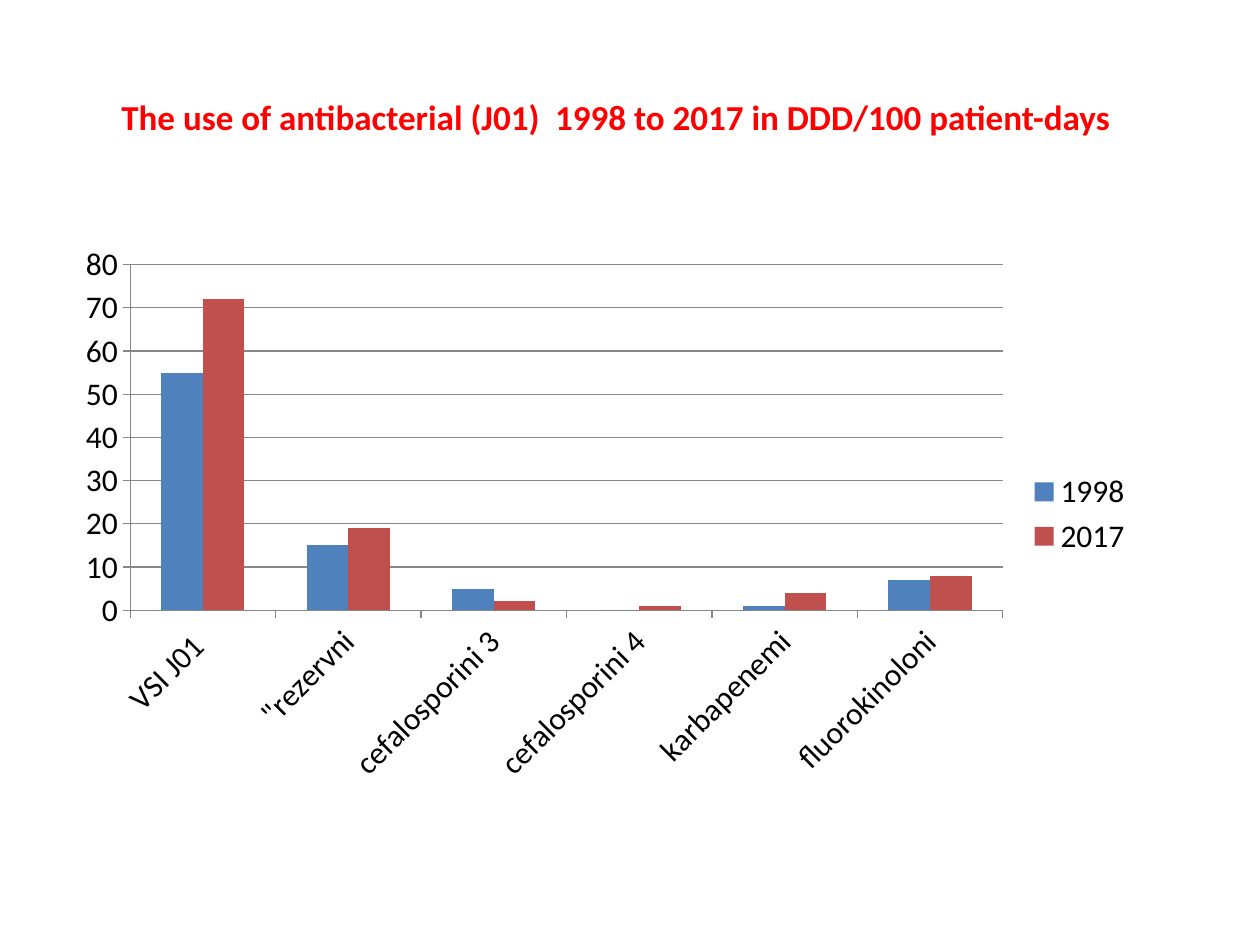
from pptx import Presentation
from pptx.chart.data import CategoryChartData as ChartData
from pptx.dml.color import RGBColor as Color
from pptx.enum.chart import XL_CHART_TYPE as ChartType
from pptx.enum.chart import XL_LEGEND_POSITION as LegendPosition
from pptx.enum.chart import XL_TICK_MARK as TickMark
from pptx.enum.text import MSO_ANCHOR as Anchor
from pptx.enum.text import PP_ALIGN as Align
from pptx.util import Inches, Pt

COLORS = {
    "title": "FF0000",
    "text": "000000",
    "1998": "4F81BD",
    "2017": "C0504D",
}
CATEGORIES = ["VSI J01 ", '"rezervni', "cefalosporini 3", "cefalosporini 4",
              "karbapenemi", "fluorokinoloni"]
USAGE = {
    "1998": [55, 15, 5, 0, 1, 7],
    "2017": [72, 19, 2, 1, 4, 8],
}


def format_font(font, size, color, name="Calibri", bold=False):
    font.size = Pt(size)
    font.name = name
    font.bold = bold
    font.color.rgb = Color.from_string(COLORS[color])


def write_text(frame, text, align=Align.CENTER, anchor=Anchor.MIDDLE, **font_format):
    frame.word_wrap = True
    frame.vertical_anchor = anchor
    para = frame.paragraphs[0]
    para.alignment = align
    span = para.add_run()
    span.text = text
    format_font(span.font, **font_format)


class SlideBuilder:
    def __init__(self, page, text_size=18):
        self.page = page
        self.text_size = text_size

    def title(self, text, left, top, width, height):
        box = self.page.shapes.title
        box.left, box.top = Inches(left), Inches(top)
        box.width, box.height = Inches(width), Inches(height)
        write_text(box.text_frame, text, size=20, color="title", bold=True)

    def column_chart(self, categories, values, left, top, width, height):
        data = ChartData()
        data.categories = categories
        for name, numbers in values.items():
            data.add_series(name, numbers)
        chart = self.page.shapes.add_chart(
            ChartType.COLUMN_CLUSTERED, Inches(left), Inches(top),
            Inches(width), Inches(height), data).chart
        format_font(chart.font, self.text_size, "text")
        chart.has_title = False
        chart.has_legend = True
        chart.legend.position = LegendPosition.RIGHT
        chart.legend.include_in_layout = False
        plot = chart.plots[0]
        plot.gap_width = 150
        plot.overlap = 0
        plot.vary_by_categories = False
        for series in plot.series:
            series.format.fill.solid()
            series.format.fill.fore_color.rgb = Color.from_string(COLORS[series.name])
        chart.value_axis.has_major_gridlines = True
        for axis in (chart.value_axis, chart.category_axis):
            axis.major_tick_mark = TickMark.OUTSIDE


def main():
    deck = Presentation()
    deck.slide_width, deck.slide_height = Inches(10), Inches(7.5)
    builder = SlideBuilder(deck.slides.add_slide(deck.slide_layouts[5]))
    builder.title("The use of antibacterial (J01)  1998 to 2017 in DDD/100 patient-days",
                  0.28, 0.3, 9.22, 1.25)
    builder.column_chart(CATEGORIES, USAGE, 0.51, 1.86, 8.58, 4.44)
    deck.save("out.pptx")


if __name__ == "__main__":
    main()
